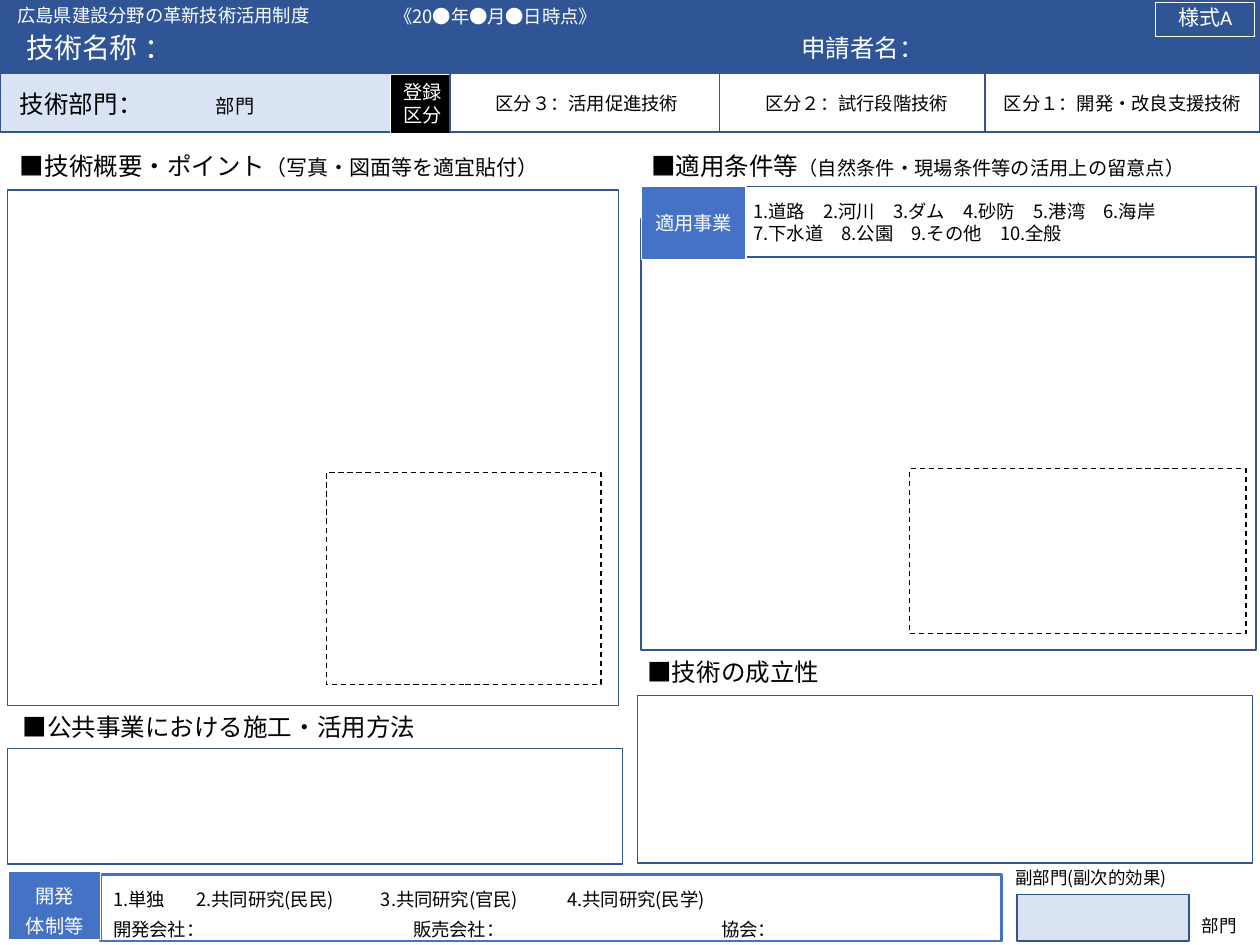
from collections import namedtuple
from dataclasses import dataclass

from lxml import etree
from pptx import Presentation
from pptx import util as u
from pptx.dml.color import RGBColor
from pptx.enum import dml, shapes, text
from pptx.oxml import ns

Box = namedtuple("Box", "left top width height")


@dataclass(frozen=True)
class Theme:
    font: str = "Noto Sans CJK JP"
    latin: str = "Calibri"
    banner: str = "2F5597"
    border: str = "325491"
    accent: str = "4472C4"
    pale: str = "DAE3F3"
    black: str = "000000"
    white: str = "FFFFFF"
    title: float = 16
    heading: float = 14
    form: float = 12
    label: float = 11
    body: float = 10.5
    small: float = 10
    thin: float = 0.75
    medium: float = 1
    thick: float = 1.5


THEME = Theme()


def inside(box, left, top, width, height):
    return Box(box.left + left, box.top + top, width, height)


def set_font(font, size, color, latin=THEME.font):
    font.size = u.Pt(size)
    font.color.rgb = RGBColor.from_string(color)
    font.name = latin


def set_east_asian(span):
    properties = span.font._element if hasattr(span.font, "_element") else span._r.get_or_add_rPr()
    east_asian = etree.SubElement(properties, ns.qn("a:ea"))
    east_asian.set("typeface", THEME.font)


def set_tabs(para, stops):
    tabs = etree.Element(ns.qn("a:tabLst"))
    for stop in stops:
        tab = etree.SubElement(tabs, ns.qn("a:tab"))
        tab.set("pos", str(u.Pt(stop)))
        tab.set("algn", "l")
    properties = para._p.get_or_add_pPr()
    following = properties.find(ns.qn("a:defRPr"))
    if following is None:
        properties.append(tabs)
    else:
        following.addprevious(tabs)


def write(shape, lines, size, color=THEME.black, align=text.PP_ALIGN.LEFT,
          anchor=text.MSO_ANCHOR.TOP, spacing=None, tabs=(), latin=THEME.font):
    frame = shape.text_frame
    frame.word_wrap = True
    frame.vertical_anchor = anchor
    for index, line in enumerate(lines):
        para = frame.paragraphs[0] if index == 0 else frame.add_paragraph()
        para.alignment = align
        if spacing:
            para.line_spacing = u.Pt(spacing)
        set_font(para.font, size, color, latin)
        parts = [(line, size)] if isinstance(line, str) else line
        for words, part_size in parts:
            span = para.add_run()
            span.text = words
            set_font(span.font, part_size, color, latin)
            set_east_asian(span)
        if tabs:
            set_tabs(para, tabs[index])


def add_text(page, box, lines, size, **style):
    shape = page.shapes.add_textbox(*map(u.Pt, box))
    write(shape, lines, size, **style)


def add_rect(page, box, fill=THEME.white, line=THEME.border, width=THEME.medium, dashed=False):
    shape = page.shapes.add_shape(shapes.MSO_SHAPE.RECTANGLE, *map(u.Pt, box))
    shape.shadow.inherit = False
    if fill:
        shape.fill.solid()
        shape.fill.fore_color.rgb = RGBColor.from_string(fill)
    else:
        shape.fill.background()
    shape.line.color.rgb = RGBColor.from_string(line)
    shape.line.width = u.Pt(width)
    if dashed:
        shape.line.dash_style = dml.MSO_LINE.DASH
    return shape


def add_label(page, box, lines, fill, **style):
    shape = add_rect(page, box, fill, THEME.white, THEME.thin)
    write(shape, lines, THEME.label, THEME.white, **style)


def add_picture_area(page, box):
    add_rect(page, box, None, THEME.black, THEME.thin, dashed=True)


def add_header(page, box):
    add_rect(page, box, THEME.banner)
    for left, top, width, height, words, size in (
        (450.7, 15.1, 260.6, 24.5, "申請者名：", THEME.heading),
        (7.9, 13.7, 442.8, 26.6, "技術名称 ：", THEME.title),
        (2.9, -1.4, 260.6, 20.9, "広島県建設分野の革新技術活用制度", THEME.body),
        (218.2, -0.7, 155.5, 20.2, "《20●年●月●日時点》", THEME.body),
    ):
        add_text(page, inside(box, left, top, width, height), [words], size, color=THEME.white)
    form = add_rect(page, inside(box, 660.2, 1.4, 56.9, 19.4), None, THEME.white, THEME.thin)
    write(form, ["様式A"], THEME.form, THEME.white, text.PP_ALIGN.CENTER,
          spacing=12, latin=THEME.latin)


def add_classification(page, box):
    add_rect(page, inside(box, 0, 0, 223.2, box.height), THEME.pale)
    add_text(page, inside(box, 4.3, 5.8, 216, 24.5),
             [[("技術部門：\t", THEME.heading), ("部門", THEME.label)]],
             THEME.heading, tabs=[[112]])
    add_label(page, inside(box, 223.2, 0.7, 36.7, box.height), ["登録", "区分"], THEME.black)
    for left, words in ((257, "区分３：活用促進技術"), (411.1, "区分２：試行段階技術"),
                        (563, "区分１：開発・改良支援技術")):
        category = add_rect(page, inside(box, left, 0, 157, box.height))
        write(category, [words], THEME.body, align=text.PP_ALIGN.CENTER,
              anchor=text.MSO_ANCHOR.MIDDLE)


def add_section(page, box, heading_box, title, note="", note_size=THEME.label):
    parts = [(title, THEME.heading)] + ([(note, note_size)] if note else [])
    add_text(page, heading_box, [parts], THEME.heading)
    add_rect(page, box)


def add_overview(page, box):
    add_section(page, box, inside(box, 0, -25.9, 320.4, 24.5),
                "■技術概要・ポイント", "（写真・図面等を適宜貼付）", THEME.form)
    add_picture_area(page, inside(box, 182.2, 161.3, 157, 121))


def add_conditions(page, box):
    add_section(page, box, inside(box, -1.4, -42.5, 341.3, 24.5),
                "■適用条件等", "（自然条件・現場条件等の活用上の留意点）")
    add_picture_area(page, inside(box, 153.4, 142.6, 192.2, 94.3))
    projects = add_rect(page, inside(box, 56.9, -18.7, 294.5, 40.3))
    write(projects, ["1.道路　2.河川　3.ダム　4.砂防　5.港湾　6.海岸",
                     "7.下水道　8.公園　9.その他　10.全般"],
          THEME.body, anchor=text.MSO_ANCHOR.MIDDLE)
    add_label(page, inside(box, 0, -18.7, 59.8, 41.8), ["適用事業"], THEME.accent,
              align=text.PP_ALIGN.CENTER, anchor=text.MSO_ANCHOR.MIDDLE)


def add_development(page, box):
    details = add_rect(page, inside(box, 52.6, 1.4, 514.8, 38.2),
                       line=THEME.accent, width=THEME.thick)
    write(details, ["1.単独\t2.共同研究(民民)\t3.共同研究(官民)\t4.共同研究(民学)",
                    "開発会社：\t販売会社：\t協会："],
          THEME.body, spacing=17, tabs=[[47.5, 153, 259.5], [171.5, 347.5]])
    add_label(page, inside(box, 0, 0, 52.6, 38.9), ["開発", "体制等"], THEME.accent,
              align=text.PP_ALIGN.CENTER, spacing=17)


def add_secondary_department(page, box):
    add_rect(page, inside(box, 7.9, 19.4, 98.6, 26.6), THEME.pale)
    add_text(page, inside(box, 0, 0, 136.1, 19.4), ["副部門(副次的効果)"], THEME.small)
    add_text(page, inside(box, 106.6, 27.4, 36.7, 19.4), ["部門"], THEME.small)


def main():
    deck = Presentation()
    deck.slide_width, deck.slide_height = u.Pt(720), u.Pt(540)
    page = deck.slides.add_slide(deck.slide_layouts[6])
    add_overview(page, Box(4.3, 108.7, 349.2, 294.5))
    add_section(page, Box(4.3, 427.7, 351.4, 66.2), Box(5.8, 403.2, 341.3, 24.5),
                "■公共事業における施工・活用方法")
    add_conditions(page, Box(366.5, 125.3, 351.4, 246.2))
    add_section(page, Box(364.3, 397.4, 351.4, 95.8), Box(362.9, 372.2, 341.3, 24.5),
                "■技術の成立性")
    add_development(page, Box(5, 498.2, 567.4, 39.6))
    add_secondary_department(page, Box(573.1, 491.8, 143.3, 46.8))
    add_header(page, Box(0, 0, 720, 41.8))
    add_classification(page, Box(0, 41.8, 720, 33.8))
    deck.save("out.pptx")


if __name__ == "__main__":
    main()
